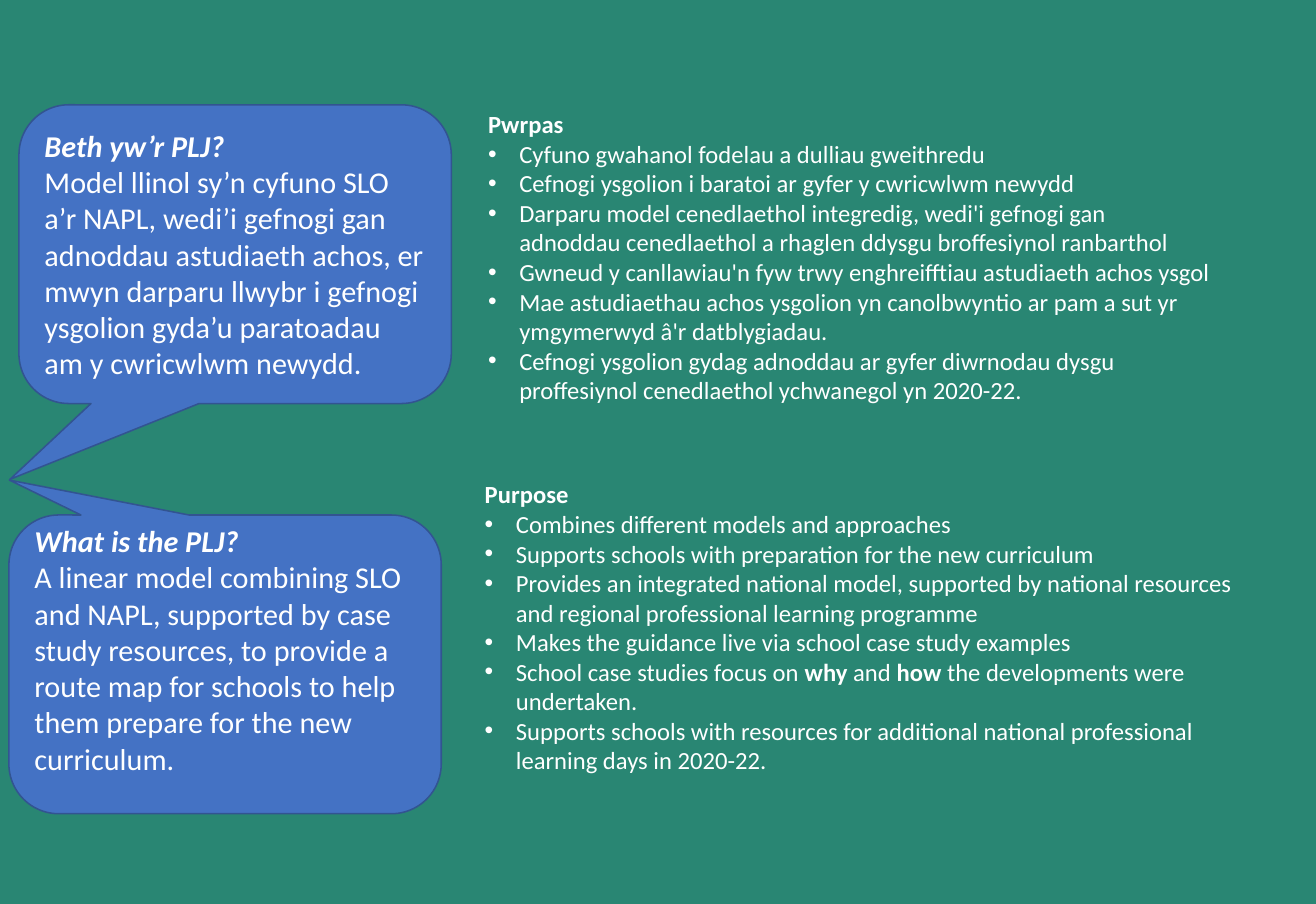
from lxml import etree
from pptx import Presentation
from pptx import util as u
from pptx.dml import color
from pptx.enum import shapes, text
from pptx.oxml import ns

BACKGROUND, BUBBLE, OUTLINE, WHITE = "298673", "4472C4", "325491", "FFFFFF"
QUESTION_SIZE, PURPOSE_SIZE = 19.5, 15.9
HANGING = 0.28

questions = [
    {
        "question": "Beth yw’r PLJ?",
        "answer": "Model llinol sy’n cyfuno SLO a’r NAPL, wedi’i gefnogi gan adnoddau "
                  "astudiaeth achos, er mwyn darparu llwybr i gefnogi ysgolion gyda’u "
                  "paratoadau am y cwricwlwm newydd.",
        "place": (0.17, 0.94, 3.88, 2.68),
        "tail": (-0.521, 0.754, 0.167),
        "bottom": 0.05,
    },
    {
        "question": "What is the PLJ?",
        "answer": "A linear model combining SLO and NAPL, supported by case study resources, "
                  "to provide a route map for schools to help them prepare for the new "
                  "curriculum.",
        "place": (0.08, 4.62, 3.88, 2.68),
        "tail": (-0.499, -0.617, 0.167),
        "bottom": 0.32,
    },
]

purposes = [
    {
        "heading": "Pwrpas",
        "place": (4.28, 0.93, 6.69, 2.78),
        "points": [
            ["Cyfuno gwahanol fodelau a dulliau gweithredu"],
            ["Cefnogi ysgolion i baratoi ar gyfer y cwricwlwm newydd"],
            ["Darparu model cenedlaethol integredig, wedi'i gefnogi gan adnoddau "
             "cenedlaethol a rhaglen ddysgu broffesiynol ranbarthol"],
            ["Gwneud y canllawiau'n fyw trwy enghreifftiau astudiaeth achos ysgol"],
            ["Mae astudiaethau achos ysgolion yn canolbwyntio ar pam a sut yr "
             "ymgymerwyd â'r datblygiadau."],
            ["Cefnogi ysgolion gydag adnoddau ar gyfer diwrnodau dysgu proffesiynol "
             "cenedlaethol ychwanegol yn 2020-22."],
        ],
    },
    {
        "heading": "Purpose",
        "place": (4.25, 4.25, 7.25, 2.78),
        "points": [
            ["Combines different models and approaches"],
            ["Supports schools with preparation for the new curriculum"],
            ["Provides an integrated national model, supported by national resources "
             "and regional professional learning programme"],
            ["Makes the guidance live via school case study examples"],
            ["School case studies focus on ", "why ", "and ", "how",
             " the developments were undertaken."],
            ["Supports schools with resources for additional national professional "
             "learning days in 2020-22."],
        ],
    },
]


def rgb(hex_string):
    return color.RGBColor.from_string(hex_string)


def apply(target, formats):
    for attribute, value in formats.items():
        setattr(target, attribute, value)


def place(part, box):
    apply(part, dict(zip(("left", "top", "width", "height"), map(u.Inches, box))))


def set_bullet(paragraph, bullet):
    properties = paragraph._p.get_or_add_pPr()
    indent = u.Inches(HANGING if bullet else 0)
    properties.set("marL", str(indent))
    properties.set("indent", str(-indent))
    if bullet:
        etree.SubElement(properties, ns.qn("a:buFont")).set("typeface", "Arial")
        etree.SubElement(properties, ns.qn("a:buChar")).set("char", bullet)
    else:
        etree.SubElement(properties, ns.qn("a:buNone"))


def write(frame, lines, size):
    for number, (bullet, runs) in enumerate(lines):
        paragraph = frame.add_paragraph() if number else frame.paragraphs[0]
        set_bullet(paragraph, bullet)
        apply(paragraph, {"alignment": text.PP_ALIGN.LEFT, "line_spacing": 1.0,
                          "space_before": u.Pt(0), "space_after": u.Pt(0)})
        for words, bold, italic in runs:
            run = paragraph.add_run()
            run.text = words
            apply(run.font, {"name": "Calibri", "size": u.Pt(size),
                             "bold": bold, "italic": italic})
            run.font.color.rgb = rgb(WHITE)


def add_question(slide, item):
    bubble = slide.shapes.add_shape(shapes.MSO_SHAPE.ROUNDED_RECTANGULAR_CALLOUT,
                                    *map(u.Inches, item["place"]))
    for number, value in enumerate(item["tail"]):
        bubble.adjustments[number] = value
    bubble.shadow.inherit = False
    bubble.fill.solid()
    bubble.fill.fore_color.rgb = rgb(BUBBLE)
    bubble.line.color.rgb = rgb(OUTLINE)
    bubble.line.width = u.Pt(1)
    apply(bubble.text_frame, {"word_wrap": True, "margin_bottom": u.Inches(item["bottom"]),
                              "vertical_anchor": text.MSO_ANCHOR.MIDDLE})
    write(bubble.text_frame, [(None, [(item["question"], True, True)]),
                              (None, [(item["answer"], False, False)])], QUESTION_SIZE)


def fill_purpose(body, item):
    place(body, item["place"])
    apply(body.text_frame, {"word_wrap": True, "auto_size": text.MSO_AUTO_SIZE.NONE,
                            "vertical_anchor": text.MSO_ANCHOR.TOP})
    lines = [(None, [(item["heading"], True, False)])]
    for point in item["points"]:
        lines.append(("•", [(words, number % 2 == 1, False)
                            for number, words in enumerate(point)]))
    write(body.text_frame, lines, PURPOSE_SIZE)


def main():
    deck = Presentation()
    apply(deck, {"slide_width": u.Inches(11.81), "slide_height": u.Inches(8.11)})
    slide = deck.slides.add_slide(deck.slide_layouts.get_by_name("Two Content"))
    slide.background.fill.solid()
    slide.background.fill.fore_color.rgb = rgb(BACKGROUND)

    title, *bodies = slide.placeholders
    title.element.getparent().remove(title.element)
    for body, item in zip(bodies, purposes):
        fill_purpose(body, item)
    for item in questions:
        add_question(slide, item)
    deck.save("out.pptx")


if __name__ == "__main__":
    main()
